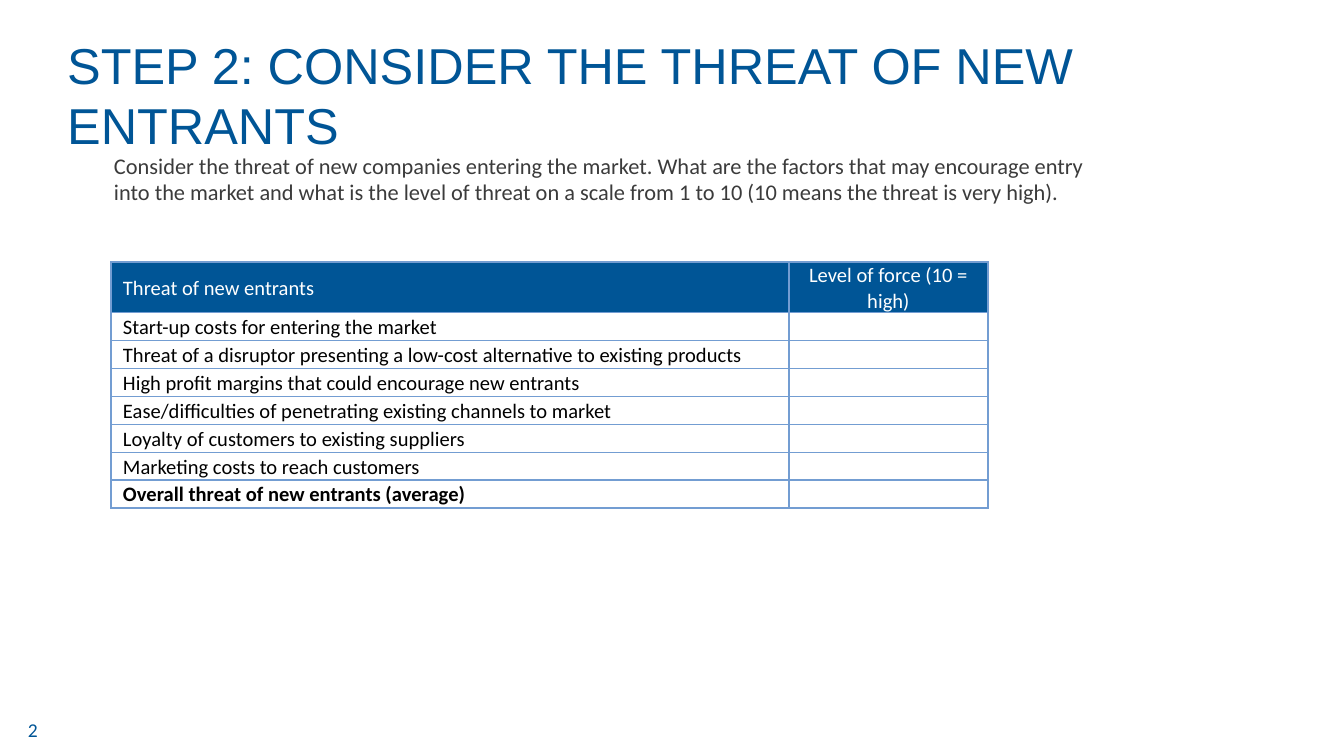
"""Build the slide that rates the threat of new entrants."""
from lxml.etree import SubElement as sub
from pptx import Presentation
from pptx.dml.color import RGBColor
from pptx.enum.text import MSO_ANCHOR as Anchor, PP_ALIGN as Align
from pptx.oxml.ns import qn
from pptx.util import Inches, Pt

tint = RGBColor.from_string
BLUE, GREY, LINE = "005596", "3B3B3B", "739DD2"

deck = Presentation()
deck.slide_width = Inches(10)
deck.slide_height = deck.slide_width * 9 // 16


def span(x, y, w, h):
    """Turn percentages of the slide into left, top, width and height."""
    wide, high = deck.slide_width / 100, deck.slide_height / 100
    return [int(n) for n in (x * wide, y * high, w * wide, h * high)]


def write(para, text, size, hue, face="Calibri", bold=False):
    """Add one formatted run to a paragraph."""
    run = para.add_run()
    run.text = text
    font = run.font
    font.size, font.name, font.bold = Pt(size), face, bold
    font.color.rgb = tint(hue)


slide = deck.slides.add_slide(deck.slide_layouts[5])
shapes = slide.shapes

title = shapes.title
title.left, title.top, title.width, title.height = span(5, 4.1, 90, 16.7)
page = shapes.add_textbox(*span(0.95, 94.9, 3, 2.67))
for frame in (title.text_frame, page.text_frame):
    frame.margin_left = frame.margin_right = 0
    frame.margin_top = frame.margin_bottom = 0
    frame.word_wrap = True

head = title.text_frame.paragraphs[0]
title.text_frame.vertical_anchor = Anchor.MIDDLE
head.alignment, head.line_spacing = Align.LEFT, 1.0
write(head, "STEP 2: CONSIDER THE THREAT OF NEW ENTRANTS", 27, BLUE, "Arial")

num = page.text_frame.paragraphs[0]
num.alignment = Align.CENTER
write(num, "2", 10.5, BLUE)

intro = shapes.add_textbox(*span(7.5, 19.2, 76.4, 8.9)).text_frame
intro.word_wrap = True
write(intro.paragraphs[0],
      "Consider the threat of new companies entering the market. "
      "What are the factors that may encourage entry into the market "
      "and what is the level of threat on a scale from 1 to 10 "
      "(10 means the threat is very high).", 12, GREY)

rows = [
    ("Threat of new entrants", "Level of force (10 = high)"),
    ("Start-up costs for entering the market", ""),
    ("Threat of a disruptor presenting a low-cost alternative "
     "to existing products", ""),
    ("High profit margins that could encourage new entrants", ""),
    ("Ease/difficulties of penetrating existing channels to market", ""),
    ("Loyalty of customers to existing suppliers", ""),
    ("Marketing costs to reach customers", ""),
    ("Overall threat of new entrants (average)", ""),
]
last = len(rows) - 1
grid = shapes.add_table(len(rows), 2,
                        *span(8.25, 34.65, 65.25, 3.7 * len(rows))).table
grid.first_row = grid.horz_banding = False
for col, share in zip(grid.columns, (50.45, 14.8)):
    col.width = span(0, 0, share, 0)[2]

for r, row in enumerate(rows):
    for c, text in enumerate(row):
        cell = grid.cell(r, c)
        cell.margin_left = cell.margin_right = Inches(0.01)
        cell.margin_top, cell.margin_bottom = Inches(0.01), 0
        cell.vertical_anchor = Anchor.BOTTOM if c else Anchor.MIDDLE
        props = cell._tc.get_or_add_tcPr()
        for side in ("L", "R", "T", "B"):
            edge = sub(props, qn(f"a:ln{side}"), w=str(Pt(1)))
            sub(sub(edge, qn("a:solidFill")), qn("a:srgbClr"), val=LINE)
        if r == 0:
            cell.fill.solid()
            cell.fill.fore_color.rgb = tint(BLUE)
        else:
            cell.fill.background()
        para = cell.text_frame.paragraphs[0]
        if c:
            para.alignment = Align.CENTER
        else:
            para._p.get_or_add_pPr().set("marL", str(Inches(0.08)))
        if text:
            write(para, text, 11, "000000" if r else "FFFFFF", bold=r == last)
        else:
            sub(para._p, qn("a:endParaRPr"), sz="1100")

deck.save("out.pptx")
